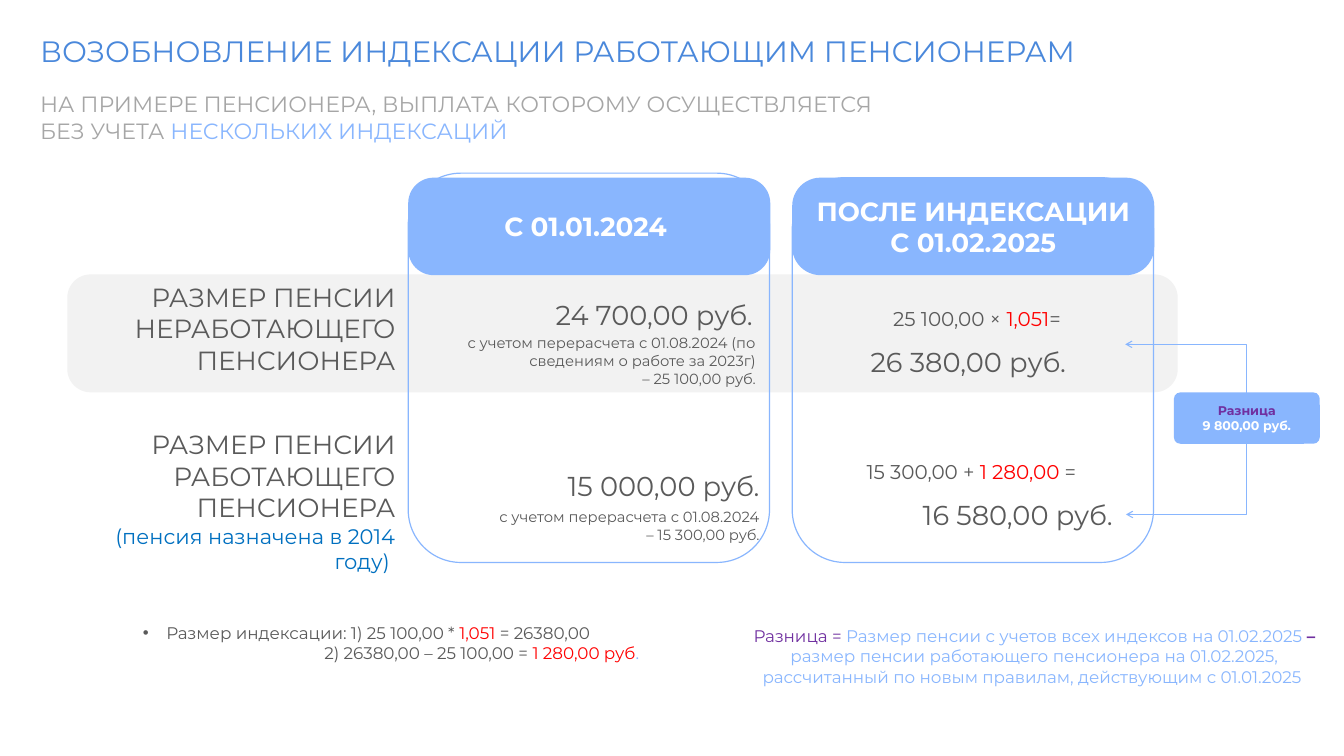
from pptx import Presentation
from pptx.dml.color import RGBColor
from pptx.enum.shapes import MSO_CONNECTOR as Link, MSO_SHAPE as Kind
from pptx.enum.text import MSO_ANCHOR as Anchor, MSO_AUTO_SIZE as Auto, PP_ALIGN as Align
from pptx.util import Inches, Pt
from lxml.etree import SubElement
from pptx.oxml.ns import qn

FONT = "Montserrat"
BLUE, GREY, RED = "89B6FE", "5A5A5A", "FF0000"
PURPLE, WHITE = "7030A0", "FFFFFF"
LEFT, MID, RIGHT = Align.LEFT, Align.CENTER, Align.RIGHT


def color(code):
    return RGBColor.from_string(code)


def place(item, box):
    item.left, item.top, item.width, item.height = map(Inches, box)


def add_run(para, text, size, code, bold=False):
    for i, part in enumerate(text.split("\n")):
        if i:
            para.add_line_break()
        if part:
            run = para.add_run()
            run.text = part
            font = run.font
            font.name, font.size, font.bold = FONT, Pt(size), bold
            font.color.rgb = color(code)


def write(item, paras, align, anchor=Anchor.TOP):
    frame = item.text_frame
    frame.word_wrap = True
    frame.auto_size = Auto.NONE
    frame.vertical_anchor = anchor
    frame.margin_left = frame.margin_right = Inches(0.18)
    frame.margin_top = frame.margin_bottom = Inches(0.09)
    for i, runs in enumerate(paras):
        para = frame.add_paragraph() if i else frame.paragraphs[0]
        para.alignment = align
        para.space_before = Pt(0)
        for run in runs:
            add_run(para, *run)


def add_text(slide, box, paras, align=RIGHT):
    item = slide.shapes.add_textbox(*map(Inches, box))
    write(item, paras, align)


def add_card(slide, box, bend, fill=None, line=None, runs=None):
    card = slide.shapes.add_shape(Kind.ROUNDED_RECTANGLE, *map(Inches, box))
    card.shadow.inherit = False
    card.adjustments[0] = bend
    if fill:
        card.fill.solid()
        card.fill.fore_color.rgb = color(fill)
    else:
        card.fill.background()
    if line:
        card.line.color.rgb = color(line)
        card.line.width = Pt(1.13)
    else:
        card.line.fill.background()
    if runs:
        write(card, [runs], MID, Anchor.MIDDLE)
    return card


def add_elbow(slide, badge, site, box, turn, flip=False):
    link = slide.shapes.add_connector(Link.ELBOW, 0, 0, 0, 0)
    link.begin_connect(badge, site)
    place(link, box)
    link.line.color.rgb = color(BLUE)
    link.line.width = Pt(1)
    prop = link._element.spPr
    prop.find(qn("a:prstGeom")).set("prst", "bentConnector2")
    frame = prop.find(qn("a:xfrm"))
    for key in ("flipH", "flipV"):
        frame.attrib.pop(key, None)
    frame.set("rot", str(turn * 60000))
    if flip:
        frame.set("flipV", "1")
    SubElement(prop.find(qn("a:ln")), qn("a:tailEnd"), type="arrow")
    SubElement(prop, qn("a:effectLst"))


def add_list(body):
    place(body, (0.25, 8.15, 9.19, 1.53))
    write(body, [
        [("Размер индексации: 1) 25 100,00 * ", 16, GREY), ("1,051 ", 16, RED),
         ("= 26380,00", 16, GREY)],
        [("2) 26380,00 – 25 100,00 = ", 16, GREY), ("1 280,00 руб", 16, RED),
         (".", 16, BLUE)],
    ], LEFT)
    for para, left, hang, mark in zip(body.text_frame.paragraphs, (1.77, 3.86),
                                      (-0.31, 0), ("•", None)):
        prop = para._p.get_or_add_pPr()
        prop.set("marL", str(Inches(left)))
        prop.set("indent", str(Inches(hang)))
        if mark:
            SubElement(prop, qn("a:buFont"), typeface="Arial")
            SubElement(prop, qn("a:buChar"), char=mark)
        else:
            SubElement(prop, qn("a:buNone"))


def add_head(slide):
    title = slide.shapes.title
    place(title, (0.35, 0.38, 16.52, 0.62))
    write(title, [[("ВОЗОБНОВЛЕНИЕ ИНДЕКСАЦИИ РАБОТАЮЩИМ ПЕНСИОНЕРАМ", 28, "4A88DB")]], LEFT)
    title.text_frame.paragraphs[0].line_spacing = 0.95
    add_text(slide, (0.35, 1.11, 17.43, 0.88), [[
        ("НА ПРИМЕРЕ ПЕНСИОНЕРА, ВЫПЛАТА КОТОРОМУ ОСУЩЕСТВЛЯЕТСЯ \nБЕЗ УЧЕТА ", 21, "A6A6A6"),
        ("НЕСКОЛЬКИХ ИНДЕКСАЦИЙ", 21, BLUE)]], LEFT)


def add_cards(slide):
    add_card(slide, (0.89, 3.63, 14.69, 1.56), 0.198, fill="F2F2F2")
    for left, top, bend, text in (
            (5.4, 2.29, 0.262, "С 01.01.2024 "),
            (10.48, 2.35, 0.291, "ПОСЛЕ ИНДЕКСАЦИИ\nС 01.02.2025")):
        add_card(slide, (left, top, 4.78, 7.44 - top), 0.146, line=BLUE)
        add_card(slide, (left, 2.35, 4.79, 1.29), bend, fill=BLUE,
                 runs=[(text, 25, WHITE, True)])


def add_rows(slide):
    add_text(slide, (0.93, 3.63, 4.48, 1.44), [
        [("РАЗМЕР ПЕНСИИ", 25, GREY)], [("НЕРАБОТАЮЩЕГО ПЕНСИОНЕРА", 25, GREY)]])
    add_text(slide, (0.93, 5.58, 4.48, 2.12), [
        [("РАЗМЕР ПЕНСИИ", 25, GREY)], [("РАБОТАЮЩЕГО ПЕНСИОНЕРА", 25, GREY)],
        [("(пенсия назначена в 2014 году) ", 20, "0070C0")]])
    for left, top, text, align in (
            (5.66, 3.85, "24 700,00 руб.", RIGHT),
            (5.75, 6.11, "15 000,00 руб.", RIGHT),
            (10.57, 4.47, "26 380,00 руб.", MID),
            (10.42, 6.5, "16 580,00 руб.", RIGHT)):
        add_text(slide, (left, top, 4.48, 0.62), [[(text, 26, GREY)]], align)
    for left, top, base, plus, end in (
            (11.01, 3.97, "25 100,00 × ", "1,051", "="),
            (10.97, 5.99, "15 300,00 + ", "1 280,00 ", "= ")):
        add_text(slide, (left, top, 3.83, 0.5), [[
            (base, 19, GREY), (plus, 19, RED), (end, 19, GREY)]], MID)
    for left, top, high, text in (
            (5.67, 4.33, 0.89, "с учетом перерасчета с 01.08.2024 (по сведениям "
             "о работе за 2023г)\n – 25 100,00 руб."),
            (5.72, 6.63, 0.65, "с учетом перерасчета с 01.08.2024\n – 15 300,00 руб.")):
        add_text(slide, (left, top, 4.51, high), [[(text, 14, GREY)]])


def add_gap(slide):
    badge = add_card(slide, (15.53, 5.19, 1.93, 0.68), 0.127, fill=BLUE, runs=[
        ("Разница\n", 12, PURPLE, True), ("9 800,00 руб.", 12, WHITE, True)])
    add_elbow(slide, badge, 2, (15.22, 5.54, 0.94, 1.59), 90)
    add_elbow(slide, badge, 0, (15.37, 4.07, 0.64, 1.61), 270, True)
    add_text(slide, (9.6, 8.19, 8.17, 1.2), [[
        ("Разница = ", 16, PURPLE),
        ("Размер пенсии с учетов всех индексов на 01.02.2025 ", 16, BLUE),
        ("–", 16, PURPLE, True),
        (" размер пенсии работающего пенсионера на 01.02.2025, рассчитанный "
         "по новым правилам, действующим с 01.01.2025 ", 16, BLUE)]], MID)


def main():
    deck = Presentation()
    deck.slide_width, deck.slide_height = Inches(17.78), Inches(10)
    slide = deck.slides.add_slide(deck.slide_layouts[1])
    add_head(slide)
    add_cards(slide)
    add_rows(slide)
    add_list(slide.placeholders[1])
    add_gap(slide)
    deck.save("out.pptx")


if __name__ == "__main__":
    main()
